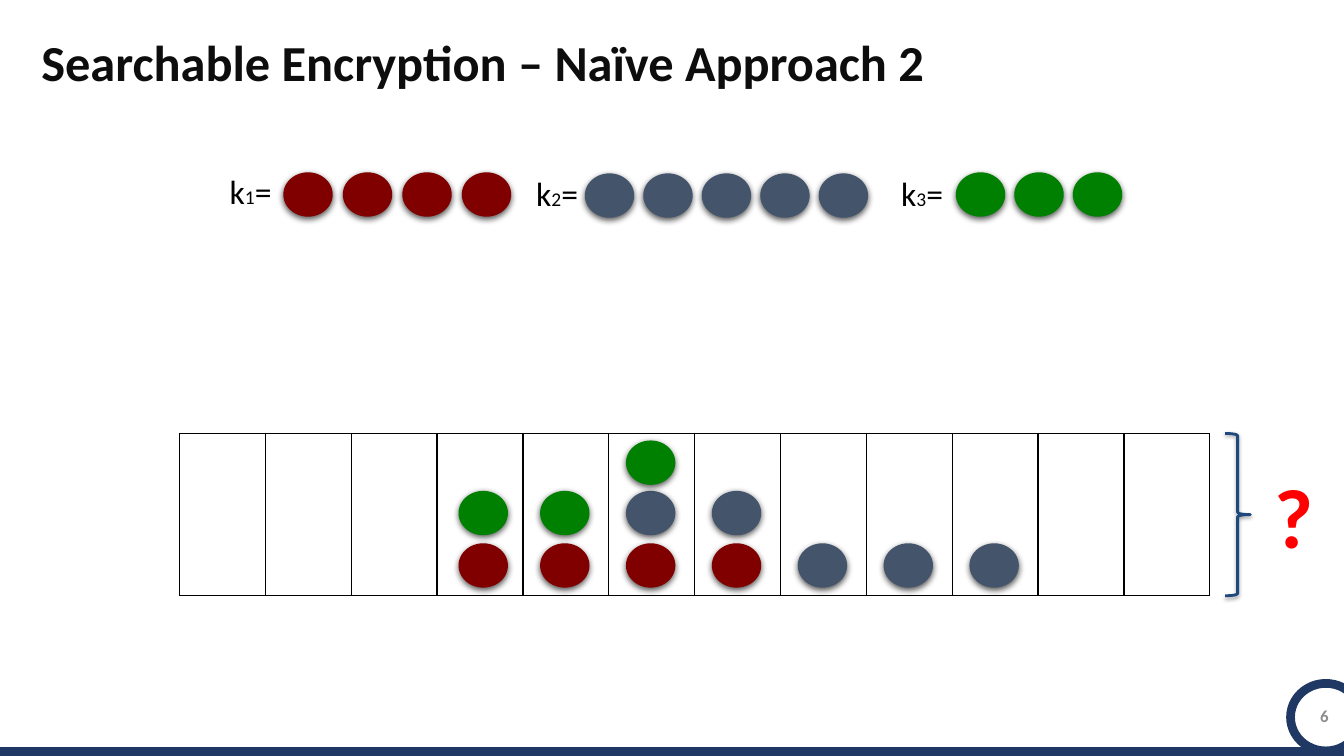
from lxml import etree
from pptx import Presentation
from pptx.dml.color import RGBColor
from pptx.enum.shapes import MSO_CONNECTOR, MSO_SHAPE as Shape
from pptx.enum.text import MSO_ANCHOR as Anchor, MSO_AUTO_SIZE as AutoSize, PP_ALIGN as Align
from pptx.oxml import parse_xml
from pptx.oxml.ns import nsdecls, qn
from pptx.util import Inches, Pt

COLORS = {"red": "800000", "slate": "44546A", "green": "008000", "navy": "203864",
          "brace": "1F497D", "title": "0D0D0D", "gray": "8C8C8C",
          "black": "000000", "alert": "FF0000"}
BALL_WIDTH, BALL_HEIGHT = 0.49, 0.44
GRID_LEFT, GRID_TOP, GRID_WIDTH, GRID_HEIGHT = 1.78, 4.3, 10.22, 1.61
COLUMNS = 12
COLUMN_WIDTH = GRID_WIDTH / COLUMNS


def write(frame, *texts, size, color="black", bold=False, align=Align.LEFT,
          anchor=Anchor.TOP, wrap=False, fit=AutoSize.SHAPE_TO_FIT_TEXT):
    """Fill a text frame; the second of several texts is a small index."""
    frame.word_wrap, frame.auto_size, frame.vertical_anchor = wrap, fit, anchor
    para = frame.paragraphs[0]
    para.alignment = align
    for place, text in enumerate(texts):
        span = para.add_run()
        span.text = text
        span.font.name, span.font.size, span.font.bold = "Calibri", Pt(size), bold
        span.font.color.rgb = RGBColor.from_string(COLORS[color])
        if place == 1:
            span.font._element.set("baseline", "1000")
    return para


def add_shadow(shape, opacity, blur, distance):
    """Cast a black shadow straight down."""
    shape.shadow.inherit = False
    effects = shape._element.spPr.find(qn("a:effectLst"))
    effects.append(parse_xml(
        f'<a:outerShdw {nsdecls("a")} blurRad="{Pt(blur)}" dist="{Pt(distance)}" '
        f'dir="5400000" rotWithShape="0"><a:srgbClr val="{COLORS["black"]}">'
        f'<a:alpha val="{opacity * 1000}"/></a:srgbClr></a:outerShdw>'))


deck = Presentation()
deck.slide_width, deck.slide_height = Inches(13.33), Inches(7.5)
page = deck.slides.add_slide(deck.slide_layouts[5])
shapes = page.shapes

# Title
title = shapes.title
title.left, title.top, title.width, title.height = map(Inches, (0.41, 0.42, 11.14, 0.42))
frame = title.text_frame
frame.margin_left = frame.margin_top = frame.margin_right = frame.margin_bottom = 0
heading = write(frame, "Searchable Encryption – Naïve Approach 2", size=36,
                color="title", bold=True, wrap=True, fit=AutoSize.NONE)
heading.line_spacing = 0.8

# Footer bar and page number
number = shapes.add_textbox(*map(Inches, (12.85, 6.9, 0.57, 0.4)))
write(number.text_frame, "6", size=12, color="gray", bold=True, align=Align.CENTER,
      anchor=Anchor.MIDDLE, wrap=True, fit=AutoSize.NONE)
bar = shapes.add_connector(MSO_CONNECTOR.STRAIGHT, *map(Inches, (-0.12, 7.47, 13.34, 7.47)))
bar.line.color.rgb = RGBColor.from_string(COLORS["navy"])
bar.line.width = Pt(8.25)
etree.SubElement(bar._element.spPr, qn("a:effectLst"))
ring = shapes.add_shape(Shape.OVAL, *map(Inches, (12.8, 6.78, 0.7, 0.67)))
ring.shadow.inherit = False
ring.fill.background()
ring.line.color.rgb = RGBColor.from_string(COLORS["navy"])
ring.line.width = Pt(6.25)

# Keywords: index, label left and top, first ball left and top, count, pitch, color
keywords = [("1", 2.18, 1.65, 2.81, 1.71, 4, 0.59, "red"),
            ("2", 5.22, 1.67, 5.8, 1.72, 5, 0.58, "slate"),
            ("3", 8.84, 1.67, 9.48, 1.71, 3, 0.58, "green")]
balls = []
for index, label_left, label_top, left, top, count, pitch, color in keywords:
    label = shapes.add_textbox(*map(Inches, (label_left, label_top, 0.64, 0.5)))
    write(label.text_frame, "k", index, "=", size=24)
    balls += [(left + step * pitch, top, color) for step in range(count)]

# Empty grid of buckets
holder = shapes.add_table(1, COLUMNS, *map(Inches, (GRID_LEFT, GRID_TOP, GRID_WIDTH, GRID_HEIGHT)))
table = holder.table
table.first_row = table.horz_banding = False
for column in table.columns:
    column.width = Inches(COLUMN_WIDTH)
for cell in table.iter_cells():
    cell.fill.background()
    for place, side in enumerate(("lnL", "lnR", "lnT", "lnB")):
        cell._tc.get_or_add_tcPr().insert(place, parse_xml(
            f'<a:{side} {nsdecls("a")} w="{Pt(1)}"><a:solidFill>'
            f'<a:srgbClr val="{COLORS["black"]}"/></a:solidFill></a:{side}>'))

# Balls stacked in the buckets, from the bottom up
stacks = [(3.05, ["red", "green"]), (4, ["red", "green"]),
          (5, ["red", "slate", "green"]), (6, ["red", "slate"]),
          (7, ["slate"]), (8, ["slate"]), (9, ["slate"])]
levels = [5.39, 4.87, 4.37]
for column, stack in stacks:
    left = GRID_LEFT + column * COLUMN_WIDTH + 0.17
    balls += [(left, top, color) for top, color in zip(levels, stack)]

for left, top, color in balls:
    ball = shapes.add_shape(Shape.FLOWCHART_CONNECTOR,
                            *map(Inches, (left, top, BALL_WIDTH, BALL_HEIGHT)))
    ball.fill.solid()
    ball.fill.fore_color.rgb = RGBColor.from_string(COLORS[color])
    ball.line.fill.background()
    add_shadow(ball, opacity=63, blur=4.5, distance=1.5)

# Open question about the bucket height
brace = shapes.add_shape(Shape.LEFT_BRACE, *map(Inches, (12.15, GRID_TOP, 0.25, GRID_HEIGHT)))
brace.rotation = 180
brace.fill.background()
brace.line.color.rgb = RGBColor.from_string(COLORS["brace"])
brace.line.width = Pt(2)
add_shadow(brace, opacity=38, blur=3.1, distance=1.6)
question = shapes.add_textbox(*map(Inches, (12.54, 4.56, 0.59, 1.11)))
write(question.text_frame, "?", size=60, color="alert", bold=True)

deck.save("out.pptx")
